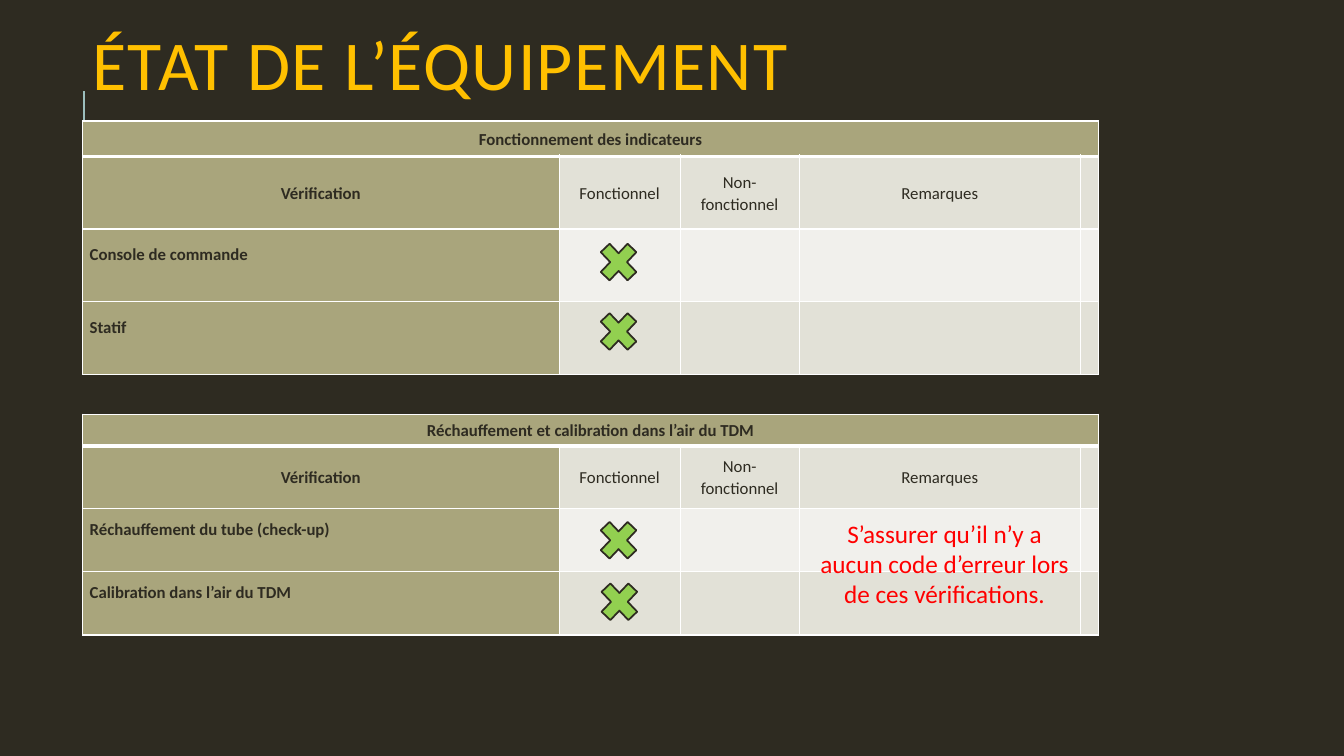
from lxml import etree
from pptx import Presentation
from pptx import util as u
from pptx.dml import color
from pptx.enum import shapes, text
from pptx.oxml import ns

Cm, Pt = u.Cm, u.Pt
HUES = {"dark": "2E2B21", "gold": "FFC000", "rule": "9CBEBD", "olive": "A9A57C",
        "mid": "E2E1D7", "pale": "F1F0EC", "white": "FFFFFF",
        "green": "92D050", "red": "FF0000"}
HUE = {k: color.RGBColor.from_string(v) for k, v in HUES.items()}
MID, LEFT = text.PP_ALIGN.CENTER, text.PP_ALIGN.LEFT


def write(frame, words, size, hue, align, bold=False, gap=None):
    para = frame.paragraphs[0]
    para.alignment = align
    para.line_spacing = gap
    run = para.add_run()
    run.text = words
    font = run.font
    font.name, font.size, font.bold = "Calibri", Pt(size), bold
    font.color.rgb = HUE[hue]
    return run


def edge(cell, row):
    props = cell._tc.get_or_add_tcPr()
    for side in ("lnL", "lnR", "lnT", "lnB"):
        thick = (row, side) in ((0, "lnB"), (1, "lnT"))
        line = etree.SubElement(props, ns.qn("a:" + side), w=str(Pt(3 if thick else 1)))
        fill = etree.SubElement(line, ns.qn("a:solidFill"))
        etree.SubElement(fill, ns.qn("a:srgbClr"), val=HUES["white"])


# Slide
deck = Presentation()
deck.slide_width, deck.slide_height = Cm(33.87), Cm(19.05)
slide = deck.slides.add_slide(deck.slide_layouts[6])
slide.background.fill.solid()
slide.background.fill.fore_color.rgb = HUE["dark"]

# Rule beside the title
rule = slide.shapes.add_connector(shapes.MSO_CONNECTOR.STRAIGHT,
                                  Cm(2.12), Cm(4.83), Cm(2.12), Cm(2.29))
rule.line.color.rgb = HUE["rule"]
rule.line.width = Pt(1.5)
etree.SubElement(rule._element.spPr, ns.qn("a:effectLst"))

# Title
title = slide.shapes.add_textbox(Cm(2.08), Cm(0.48), Cm(27), Cm(2.59)).text_frame
title.word_wrap = True
title.vertical_anchor = text.MSO_ANCHOR.MIDDLE
run = write(title, "ÉTAT DE L’ÉQUIPEMENT", 50, "gold", LEFT, gap=0.8)
run.font._element.set("spc", "100")

# Check tables: top, head height, row height, cross places, heading, items
WIDE = [12.01, 3.05, 3, 7.09, 0.33]
HEADS = ["Vérification", "Fonctionnel", "Non-fonctionnel", "Remarques", ""]
CHECKS = [
    (3.05, 0.89, 1.83, [(14.94, 5.92), (14.94, 7.67)],
     "Fonctionnement des indicateurs", ["Console de commande", "Statif"]),
    (10.44, 0.79, 1.59, [(14.94, 12.93), (14.96, 14.48)],
     "Réchauffement et calibration dans l’air du TDM",
     ["Réchauffement du tube (check-up)", "Calibration dans l’air du TDM"]),
]
for top, head, high, marks, name, items in CHECKS:
    rows = [[name] + [""] * 4, HEADS] + [[item] + [""] * 4 for item in items]
    grid = slide.shapes.add_table(4, 5, Cm(2.08), Cm(top), Cm(sum(WIDE)),
                                  Cm(head + 3 * high)).table
    for col, wide in zip(grid.columns, WIDE):
        col.width = Cm(wide)
    for r, row in enumerate(rows):
        grid.rows[r].height = Cm(high if r else head)
        for c, words in enumerate(row):
            cell = grid.cell(r, c)
            edge(cell, r)
            cell.fill.solid()
            tint = "olive" if r == 0 or c == 0 else "pale" if r == 2 else "mid"
            cell.fill.fore_color.rgb = HUE[tint]
            cell.vertical_anchor = text.MSO_ANCHOR.MIDDLE
            cell.margin_left = cell.margin_right = Cm(0.18)
            # Item labels sit above the middle of their row
            cell.margin_top = 0
            cell.margin_bottom = Cm(0.55 if r > 1 and c == 0 else 0)
            if words:
                write(cell.text_frame, words, 12, "dark", LEFT if r > 1 else MID,
                      c == 0, 1.07)
    grid.cell(0, 0).merge(grid.cell(0, 4))

    # Crosses
    for x, y in marks:
        cross = slide.shapes.add_shape(shapes.MSO_SHAPE.MATH_MULTIPLY,
                                       Cm(x), Cm(y), Cm(1.3), Cm(1.37))
        cross.shadow.inherit = False
        cross.fill.solid()
        cross.fill.fore_color.rgb = HUE["green"]
        cross.line.color.rgb = HUE["dark"]
        cross.line.width = Pt(1.25)

# Remark
note = slide.shapes.add_textbox(Cm(20.4), Cm(12.93), Cm(6.81), Cm(2.57)).text_frame
note.word_wrap = True
write(note, "S’assurer qu’il n’y a aucun code d’erreur lors de ces vérifications.",
      18, "red", MID)

deck.save("out.pptx")
